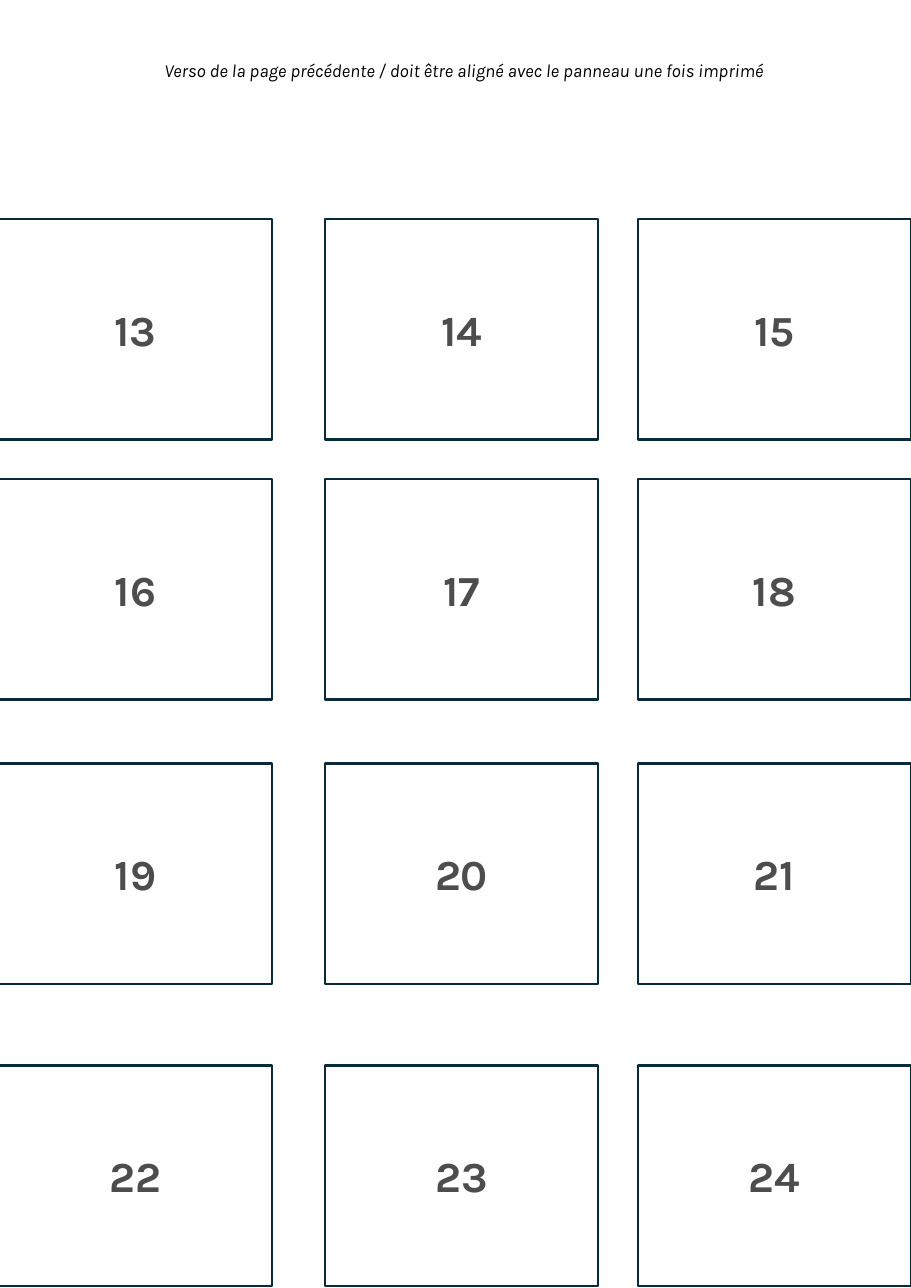
from itertools import product

from pptx import Presentation
from pptx import util as u
from pptx.dml.color import RGBColor
from pptx.enum import shapes, text

FONT = "Karla"
CARD_LEFTS = [-0.01, 2.95, 5.79]
CARD_TOPS = [1.99, 4.35, 6.93, 9.67]
CARD_WIDTH, CARD_HEIGHT = 2.48, 2
FIRST_NUMBER = 13


def color(hex_string):
    return RGBColor.from_string(hex_string)


def write_centered(text_frame, content, size, hex_string, bold=False, italic=False):
    text_frame.text = content
    text_frame.word_wrap = True
    paragraph = text_frame.paragraphs[0]
    paragraph.alignment = text.PP_ALIGN.CENTER
    font = paragraph.runs[0].font
    font.name = FONT
    font.size = u.Pt(size)
    font.bold = bold
    font.italic = italic
    font.color.rgb = color(hex_string)


presentation = Presentation()
presentation.slide_width = u.Inches(8.27)
presentation.slide_height = u.Inches(11.69)
slide = presentation.slides.add_slide(presentation.slide_layouts[6])

instruction = slide.shapes.add_textbox(
    u.Inches(1.24), u.Inches(0.49), u.Inches(5.95), u.Inches(0.3))
write_centered(
    instruction.text_frame,
    "Verso de la page précédente / doit être aligné avec le panneau une fois imprimé",
    12, "000000", italic=True)
instruction.text_frame.auto_size = text.MSO_AUTO_SIZE.SHAPE_TO_FIT_TEXT

for number, (top, left) in enumerate(product(CARD_TOPS, CARD_LEFTS), FIRST_NUMBER):
    card = slide.shapes.add_shape(
        shapes.MSO_SHAPE.RECTANGLE, u.Inches(left), u.Inches(top),
        u.Inches(CARD_WIDTH), u.Inches(CARD_HEIGHT))
    card.shadow.inherit = False
    card.fill.solid()
    card.fill.fore_color.rgb = color("FFFFFF")
    card.line.color.rgb = color("092A39")
    card.line.width = u.Pt(1.5)
    card.text_frame.vertical_anchor = text.MSO_ANCHOR.MIDDLE
    write_centered(card.text_frame, str(number), 28, "4D4D4D", bold=True)

presentation.save("out.pptx")
